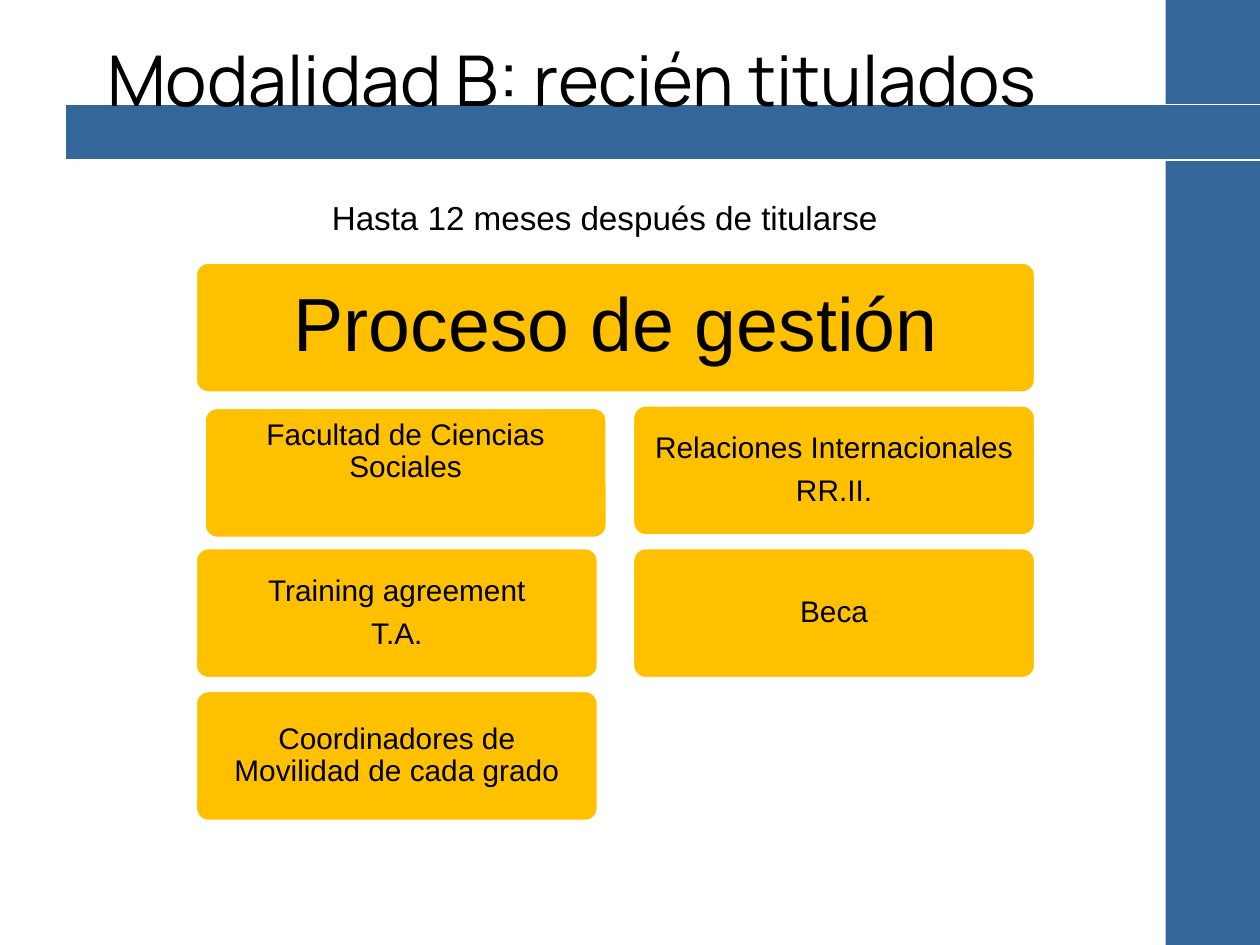
from pptx import Presentation
from pptx.dml.color import RGBColor
from pptx.enum.shapes import MSO_SHAPE
from pptx.enum.text import MSO_ANCHOR, PP_ALIGN
from pptx.util import Inches, Pt

RECT, ROUNDED = MSO_SHAPE.RECTANGLE, MSO_SHAPE.ROUNDED_RECTANGLE
MIDDLE, TOP = MSO_ANCHOR.MIDDLE, MSO_ANCHOR.TOP
LEFT, CENTER = PP_ALIGN.LEFT, PP_ALIGN.CENTER
BLUE = RGBColor(0x33, 0x66, 0x99)
AMBER = RGBColor(0xFF, 0xC0, 0x00)
WHITE = RGBColor(0xFF, 0xFF, 0xFF)
BLACK = RGBColor(0, 0, 0)

# Content
TITLE = "Modalidad B: recién titulados"
SUBTITLE = "Hasta 12 meses después de titularse"
PROCESS = "Proceso de gestión"
FACULTY = "Facultad de Ciencias Sociales"
COLUMNS = [
    [[FACULTY], ["Training agreement", "T.A."],
     ["Coordinadores de\vMovilidad de cada grado"]],
    [["Relaciones Internacionales", "RR.II."], ["Beca"]],
]

# Card grid
GRID_LEFT, GRID_TOP = 1.55, 2.08
CARD_WIDTH, CARD_HEIGHT = 3.2, 1.04
COLUMN_STEP, ROW_STEP = 3.47, 3.4 / 3
FULL_WIDTH = COLUMN_STEP + CARD_WIDTH
FACULTY_SHIFT = (0.07, 0.02)
FACULTY_BOTTOM = 0.4


def write(shape, lines, size, font="Arial", align=CENTER, anchor=MIDDLE,
          spacing=None, margins=(0.1, 0.05)):
    frame = shape.text_frame
    frame.word_wrap = True
    frame.vertical_anchor = anchor
    frame.margin_left = frame.margin_right = Inches(margins[0])
    frame.margin_top = frame.margin_bottom = Inches(margins[1])
    for index, line in enumerate(lines):
        para = frame.paragraphs[0] if index == 0 else frame.add_paragraph()
        para.text = line
        para.alignment = align
        para.line_spacing = spacing
        if index:
            para.space_before = Pt(6)
        para.font.name = font
        para.font.size = Pt(size)
        para.font.color.rgb = BLACK


def add_block(page, kind, left, top, width, height, fill, line_width=0):
    shape = page.shapes.add_shape(
        kind, Inches(left), Inches(top), Inches(width), Inches(height))
    shape.shadow.inherit = False
    shape.fill.solid()
    shape.fill.fore_color.rgb = fill
    if line_width:
        shape.line.color.rgb = WHITE
        shape.line.width = Pt(line_width)
    else:
        shape.line.fill.background()
    return shape


def add_card(page, left, top, width, lines, size, margin):
    card = add_block(page, ROUNDED, left, top, width, CARD_HEIGHT, AMBER, 2)
    card.adjustments[0] = 0.1
    write(card, lines, size, spacing=0.9, margins=(margin, margin))
    return card


def main():
    deck = Presentation()
    deck.slide_width, deck.slide_height = Inches(10), Inches(7.5)
    page = deck.slides.add_slide(deck.slide_layouts[5])

    # Blue bands, with the title in front of them
    add_block(page, RECT, 9.25, 0, 0.75, 7.5, BLUE)
    add_block(page, RECT, 0.52, 0.83, 9.9, 0.44, BLUE, 0.75)
    title = page.shapes.title
    title.left, title.top = Inches(0.75), Inches(0)
    title.width, title.height = Inches(9.25), Inches(1.25)
    write(title, [TITLE], 40, font="Manrope", align=LEFT)
    page.shapes._spTree.append(title._element)

    # Process header and cards
    add_card(page, GRID_LEFT, GRID_TOP, FULL_WIDTH, [PROCESS], 43, 0.18)
    for column, cards in enumerate(COLUMNS):
        for row, lines in enumerate(cards, start=1):
            is_faculty = lines == [FACULTY]
            shift_x, shift_y = FACULTY_SHIFT if is_faculty else (0, 0)
            card = add_card(page, GRID_LEFT + column * COLUMN_STEP + shift_x,
                            GRID_TOP + row * ROW_STEP + shift_y,
                            CARD_WIDTH, lines, 17, 0.07)
            if is_faculty:
                card.text_frame.margin_bottom = Inches(FACULTY_BOTTOM)

    # Subtitle
    subtitle = page.shapes.add_textbox(
        Inches(0.55), Inches(1.52), Inches(8.5), Inches(0.42))
    write(subtitle, [SUBTITLE], 19, anchor=TOP)

    deck.save("out.pptx")


if __name__ == "__main__":
    main()
